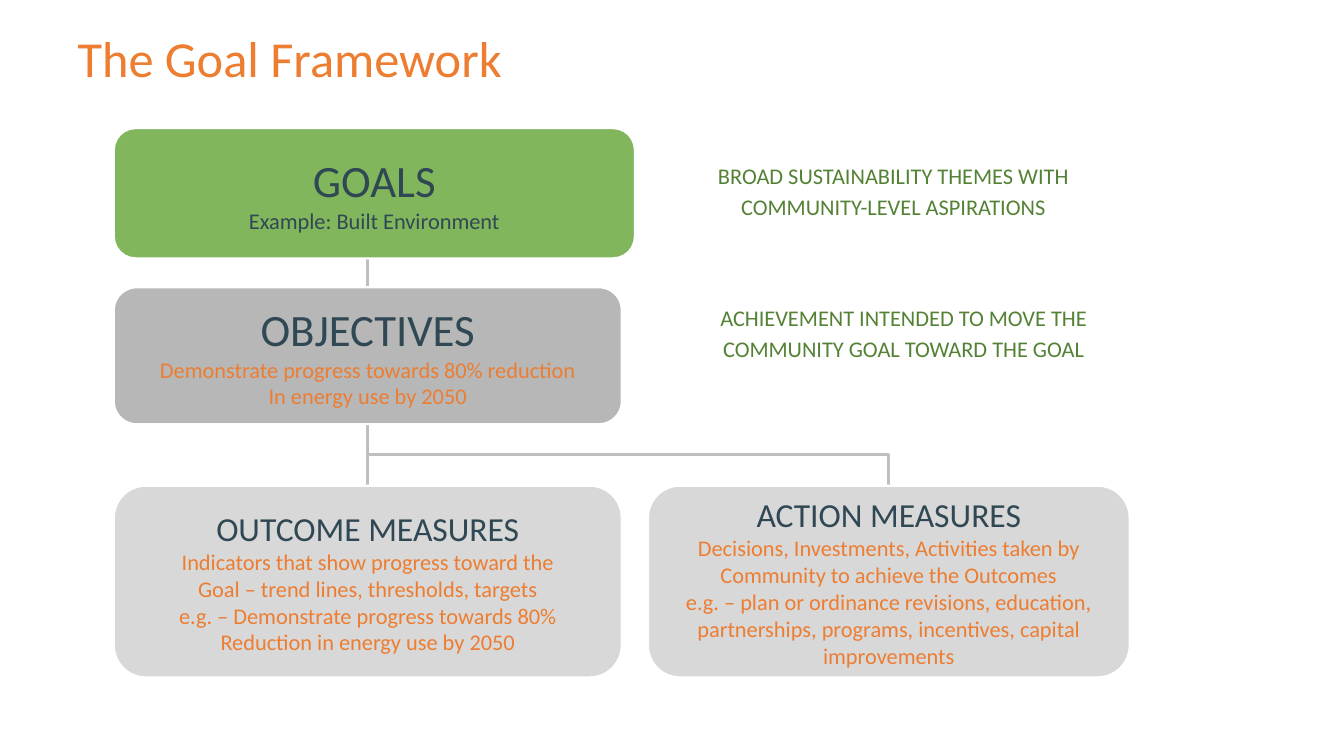
import dataclasses

import lxml.etree
import pptx
import pptx.dml.color
import pptx.enum.shapes
import pptx.enum.text
import pptx.oxml.ns
import pptx.util

Cm, Pt = pptx.util.Cm, pptx.util.Pt
PP_ALIGN = pptx.enum.text.PP_ALIGN
MIDDLE = pptx.enum.text.MSO_ANCHOR.MIDDLE
CONNECTOR = pptx.enum.shapes.MSO_CONNECTOR

COLORS = {
    "orange": "ED7D31",
    "slate": "304853",
    "note": "548235",
    "green": "70AD47",
    "gray": "A6A6A6",
    "silver": "BFBFBF",
    "white": "FFFFFF",
}
BOX_FRAME = {
    "word_wrap": False, "vertical_anchor": MIDDLE,
    "margin_left": 0, "margin_right": 0, "margin_top": 0, "margin_bottom": 0,
}
TEXT_FRAME = {"word_wrap": True, "vertical_anchor": MIDDLE}
TITLE_PARAGRAPH = {"alignment": PP_ALIGN.LEFT, "line_spacing": 0.9}
BOX_PARAGRAPH = {"alignment": PP_ALIGN.CENTER}
NOTE_PARAGRAPH = {"alignment": PP_ALIGN.CENTER, "line_spacing": 1.15, "space_after": Pt(10)}

# Shared positions in centimetres
LEFT, TRUNK_X, ACTION_X = 2.87, 9.27, 22.4
GOALS_BOTTOM, OBJECTIVES_TOP, OBJECTIVES_BOTTOM, MEASURES_TOP = 6.5, 7.24, 10.69, 12.24


@dataclasses.dataclass
class Box:
    left: float
    top: float
    width: float
    height: float
    fill: str
    opacity: int
    heading: str
    heading_size: int
    lines: list[str]
    line_color: str = "orange"


@dataclasses.dataclass
class Note:
    left: float
    top: float
    text: str


BOXES = [
    Box(LEFT, 3.23, 13.13, 3.28, "green", 88, "GOALS", 32,
        ["Example: Built Environment"], "slate"),
    Box(LEFT, OBJECTIVES_TOP, 12.8, 3.45, "gray", 80, "OBJECTIVES", 32,
        ["Demonstrate progress towards 80% reduction", "In energy use by 2050"]),
    Box(LEFT, MEASURES_TOP, 12.8, 4.83, "silver", 60, "OUTCOME MEASURES", 24,
        ["Indicators that show progress toward the",
         "Goal – trend lines, thresholds, targets",
         "e.g. – Demonstrate progress towards 80%",
         "Reduction in energy use by 2050"]),
    Box(16.33, MEASURES_TOP, 12.14, 4.83, "silver", 60, "ACTION MEASURES", 24,
        ["Decisions, Investments, Activities taken by",
         "Community to achieve the Outcomes",
         "e.g. – plan or ordinance revisions, education,",
         "partnerships, programs, incentives, capital",
         "improvements"]),
]
NOTES = [
    Note(16.99, 3.53, "BROAD SUSTAINABILITY THEMES WITH COMMUNITY-LEVEL ASPIRATIONS"),
    Note(17.25, 7.09, "ACHIEVEMENT INTENDED TO MOVE THE COMMUNITY GOAL TOWARD THE GOAL"),
]


def rgb(name: str) -> pptx.dml.color.RGBColor:
    return pptx.dml.color.RGBColor.from_string(COLORS[name])


def apply(target, values: dict) -> None:
    for name, value in values.items():
        setattr(target, name, value)


def write(p, text: str, size: int, color: str, values: dict) -> None:
    apply(p, values)
    r = p.add_run()
    r.text = text
    apply(r.font, {"name": "Calibri", "size": Pt(size)})
    r.font.color.rgb = rgb(color)


def add_line(slide, kind, x1: float, y1: float, x2: float, y2: float):
    line = slide.shapes.add_connector(kind, Cm(x1), Cm(y1), Cm(x2), Cm(y2))
    line.line.color.rgb = rgb("silver")
    line.line.width = Pt(2.25)
    lxml.etree.SubElement(line._element.spPr, pptx.oxml.ns.qn("a:effectLst"))
    return line


def add_branch(slide) -> None:
    """Elbow from the action measures up to the objectives, turned upright."""
    cx, cy = (TRUNK_X + ACTION_X) / 2, (OBJECTIVES_BOTTOM + MEASURES_TOP) / 2
    dx, dy = (MEASURES_TOP - OBJECTIVES_BOTTOM) / 2, (ACTION_X - TRUNK_X) / 2
    elbow = add_line(slide, CONNECTOR.ELBOW, cx - dx, cy + dy, cx + dx, cy - dy)
    elbow._element.spPr.find(pptx.oxml.ns.qn("a:xfrm")).set("rot", str(270 * 60000))


def add_box(slide, box: Box) -> None:
    sp = slide.shapes.add_shape(
        pptx.enum.shapes.MSO_SHAPE.ROUNDED_RECTANGLE,
        Cm(box.left), Cm(box.top), Cm(box.width), Cm(box.height))
    sp.shadow.inherit = False
    sp.fill.solid()
    sp.fill.fore_color.rgb = rgb(box.fill)
    color = sp._element.spPr.find(".//" + pptx.oxml.ns.qn("a:srgbClr"))
    alpha = lxml.etree.SubElement(color, pptx.oxml.ns.qn("a:alpha"))
    alpha.set("val", str(box.opacity * 1000))
    sp.line.color.rgb = rgb("white")
    sp.line.width = Pt(1.5)
    tf = sp.text_frame
    apply(tf, BOX_FRAME)
    write(tf.paragraphs[0], box.heading, box.heading_size, "slate", BOX_PARAGRAPH)
    for text in box.lines:
        write(tf.add_paragraph(), text, 16, box.line_color, BOX_PARAGRAPH)


def add_note(slide, note: Note) -> None:
    sp = slide.shapes.add_textbox(Cm(note.left), Cm(note.top), Cm(11.05), Cm(2.49))
    apply(sp.text_frame, TEXT_FRAME)
    write(sp.text_frame.paragraphs[0], note.text, 16, "note", NOTE_PARAGRAPH)


def main() -> None:
    prs = pptx.Presentation()
    apply(prs, {"slide_width": Cm(33.87), "slide_height": Cm(19.05)})
    slide = prs.slides.add_slide(prs.slide_layouts.get_by_name("Title Only"))

    # Title
    title = slide.shapes.title
    apply(title, {"left": Cm(1.7), "top": Cm(-0.05), "width": Cm(24.13), "height": Cm(3.18)})
    apply(title.text_frame, TEXT_FRAME)
    write(title.text_frame.paragraphs[0], "The Goal Framework", 36, "orange", TITLE_PARAGRAPH)

    # Connections between the levels
    add_branch(slide)
    for top, bottom in [(GOALS_BOTTOM, OBJECTIVES_TOP), (11.33, MEASURES_TOP)]:
        add_line(slide, CONNECTOR.STRAIGHT, TRUNK_X, bottom, TRUNK_X, top)

    # Framework levels and their explanations
    for box in BOXES:
        add_box(slide, box)
    for note in NOTES:
        add_note(slide, note)

    prs.save("out.pptx")


if __name__ == "__main__":
    main()
